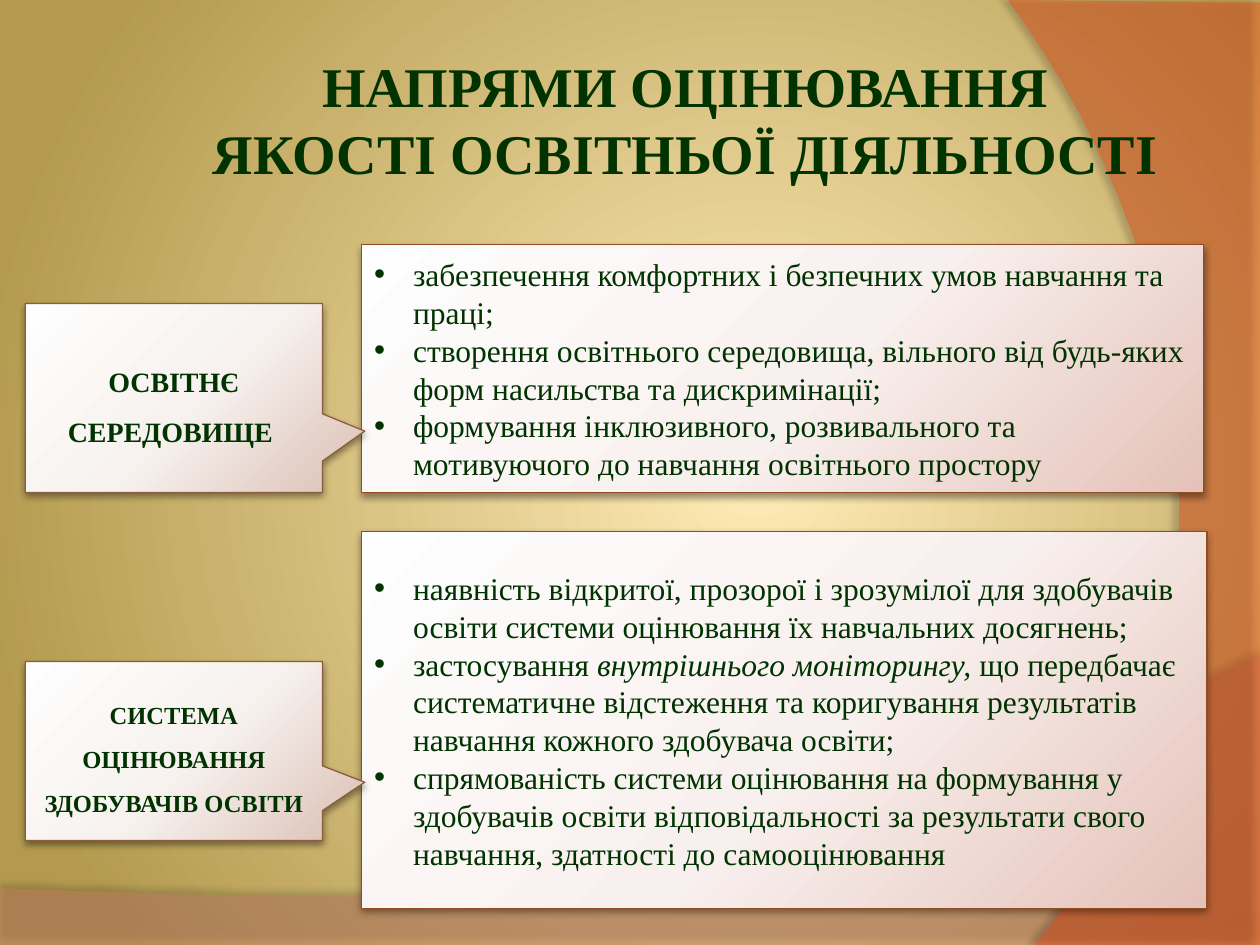
from dataclasses import dataclass

from lxml.etree import SubElement
from pptx import Presentation
from pptx.dml.color import RGBColor
from pptx.enum.shapes import MSO_SHAPE
from pptx.enum.text import MSO_ANCHOR, PP_ALIGN
from pptx.oxml.ns import qn
from pptx.util import Inches, Pt


@dataclass(frozen=True)
class Theme:
    font: str = "Times New Roman"
    text: RGBColor = RGBColor.from_string("003300")
    title_size: int = 32
    body_size: int = 18
    backdrop: tuple = ((0, "FFEBB6"), (100, "B39A4F"))
    panel: tuple = ((0, "FEFEFE"), (55, "F8F0EE"), (100, "E5C1B8"))
    panel_line: str = "934B21"
    label: tuple = ((0, "FEFEFE"), (55, "F7F2EF"), (100, "DFC7BD"))
    label_line: str = "8B5D3D"


theme = Theme()


def radial_gradient(fill, owner, stops, focus):
    """Fill with colour stops around a focus given as left, top, right, bottom percent."""
    fill.gradient()
    gradient = owner.find(".//" + qn("a:gradFill"))
    for child in list(gradient):
        gradient.remove(child)
    stop_list = SubElement(gradient, qn("a:gsLst"))
    for position, color in stops:
        stop = SubElement(stop_list, qn("a:gs"), pos=str(position * 1000))
        SubElement(stop, qn("a:srgbClr"), val=color)
    circle = SubElement(gradient, qn("a:path"), path="circle")
    SubElement(circle, qn("a:fillToRect"),
               {side: str(value * 1000) for side, value in zip("ltrb", focus)})


def cast_shadow(shape, alpha, blur, distance, angle):
    shape.shadow.inherit = False
    effects = shape.element.spPr.find(qn("a:effectLst"))
    shadow = SubElement(effects, qn("a:outerShdw"), blurRad=str(Pt(blur)),
                        dist=str(Pt(distance)), dir=str(angle * 60000), rotWithShape="0")
    color = SubElement(shadow, qn("a:srgbClr"), val="000000")
    SubElement(color, qn("a:alpha"), val=str(alpha * 1000))


deck = Presentation()
deck.slide_width, deck.slide_height = Inches(10), Inches(7.5)
slide = deck.slides.add_slide(deck.slide_layouts[6])
radial_gradient(slide.background.fill, slide.element, theme.backdrop, (60, 50, 40, 50))

# Waves: straight corners, then a Bezier curve from the last corner
waves = [
    ([(0, 7.05), (0, 7.5), (10, 7.5), (10, 5.2)],
     [(5.59, 7.29), (3.91, 7.19), (0, 7.05)], "C77E69", 45, (35, 4, 3.5, 270)),
    ([(10, 0.02), (10, 7.5), (8.21, 7.5)],
     [(9.35, 6.19), (10.18, 3), (8, 0)], "F4480F", 40, (45, 4, 4, 180)),
]
STEPS = 40
for corners, controls, color, alpha, shadow in waves:
    bezier = [corners[-1], *controls]
    outline = list(corners)
    for step in range(1, STEPS + 1):
        t = step / STEPS
        weights = ((1 - t) ** 3, 3 * t * (1 - t) ** 2, 3 * t * t * (1 - t), t ** 3)
        outline.append(tuple(sum(w * point[axis] for w, point in zip(weights, bezier))
                             for axis in (0, 1)))
    points = [(Inches(x), Inches(y)) for x, y in outline]
    builder = slide.shapes.build_freeform(*points[0])
    builder.add_line_segments(points[1:], close=True)
    wave = builder.convert_to_shape()
    wave.fill.solid()
    wave.fill.fore_color.rgb = RGBColor.from_string(color)
    SubElement(wave.element.spPr.find(".//" + qn("a:srgbClr")), qn("a:alpha"),
               val=str(alpha * 1000))
    wave.line.fill.background()
    cast_shadow(wave, *shadow)

title = slide.shapes.add_textbox(Inches(1.54), Inches(0.36), Inches(7.8), Inches(1.18))
title.text_frame.word_wrap = True
title.text_frame.text = "НАПРЯМИ ОЦІНЮВАННЯ\nЯКОСТІ ОСВІТНЬОЇ ДІЯЛЬНОСТІ"
for paragraph in title.text_frame.paragraphs:
    paragraph.alignment = PP_ALIGN.CENTER
    paragraph.font.name = theme.font
    paragraph.font.size = Pt(theme.title_size)
    paragraph.font.bold = True
    paragraph.font.color.rgb = theme.text

# Each paragraph is a list of runs; every second run is italic
environment = [
    ["забезпечення комфортних і безпечних умов навчання та праці;"],
    ["створення освітнього середовища, вільного від будь-яких форм насильства та дискримінації;"],
    ["формування інклюзивного, розвивального та мотивуючого до навчання освітнього простору"],
]
assessment = [
    ["наявність відкритої, прозорої і зрозумілої для здобувачів освіти системи оцінювання "
     "їх навчальних досягнень;"],
    ["застосування ", "внутрішнього моніторингу, ",
     "що передбачає систематичне відстеження та коригування результатів навчання "
     "кожного здобувача освіти;"],
    ["спрямованість системи оцінювання на формування у здобувачів освіти відповідальності "
     "за результати свого навчання, здатності до самооцінювання"],
]
panel, callout = MSO_SHAPE.RECTANGLE, MSO_SHAPE.RECTANGULAR_CALLOUT
boxes = [
    (panel, (2.87, 1.94, 6.68, 1.97), theme.body_size, environment),
    (panel, (2.87, 4.22, 6.71, 2.99), theme.body_size, assessment),
    (callout, (0.2, 2.41, 2.36, 1.5), 16, [["ОСВІТНЄ СЕРЕДОВИЩЕ "]]),
    (callout, (0.2, 5.25, 2.36, 1.42), 14, [["СИСТЕМА"], ["ОЦІНЮВАННЯ ЗДОБУВАЧІВ ОСВІТИ"]]),
]
for kind, bounds, size, paragraphs in boxes:
    is_label = kind == callout
    box = slide.shapes.add_shape(kind, *map(Inches, bounds))
    if is_label:
        box.adjustments[0], box.adjustments[1] = 0.642, 0.175
    radial_gradient(box.fill, box.element, theme.label if is_label else theme.panel,
                    (-40, -90, 140, 190))
    box.line.color.rgb = RGBColor.from_string(theme.label_line if is_label else theme.panel_line)
    box.line.width = Pt(0.75)
    cast_shadow(box, 40, 4.1, 2, 90)
    frame = box.text_frame
    frame.word_wrap = True
    frame.vertical_anchor = MSO_ANCHOR.MIDDLE
    for index, runs in enumerate(paragraphs):
        paragraph = frame.add_paragraph() if index else frame.paragraphs[0]
        for position, text in enumerate(runs):
            run = paragraph.add_run()
            run.text = text
            if position % 2:
                run.font.italic = True
        paragraph.alignment = PP_ALIGN.CENTER if is_label else PP_ALIGN.LEFT
        if is_label:
            paragraph.line_spacing = 1.5
        else:
            properties = paragraph._p.get_or_add_pPr()
            properties.set("marL", str(Inches(0.31)))
            properties.set("indent", str(Inches(-0.31)))
            SubElement(properties, qn("a:buFont"), typeface="Arial")
            SubElement(properties, qn("a:buChar"), char="•")
        paragraph.font.name = theme.font
        paragraph.font.size = Pt(size)
        paragraph.font.bold = is_label
        paragraph.font.color.rgb = theme.text

deck.save("out.pptx")
